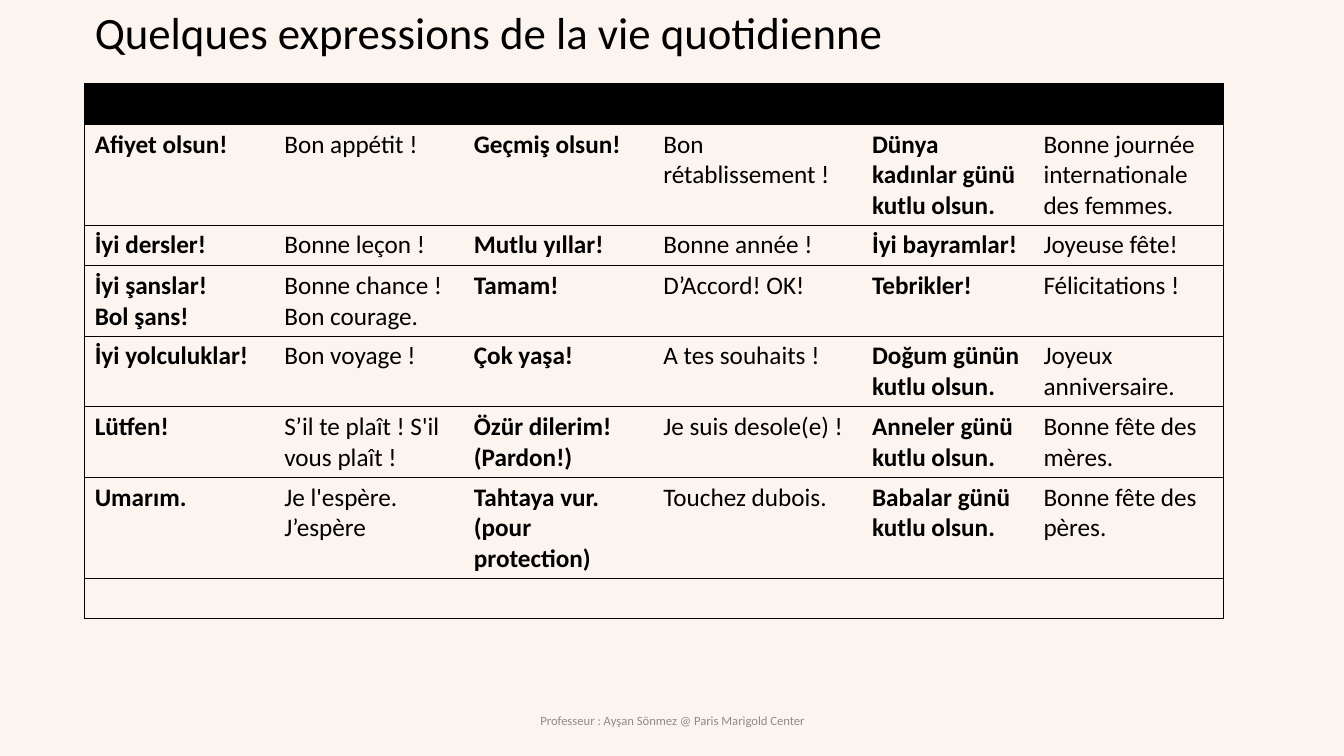
"""Build a slide with a table of everyday Turkish expressions and their French meaning."""
import pptx
import pptx.dml.color
import pptx.enum.text
import pptx.oxml
import pptx.oxml.ns
import pptx.util

TITLE = "Quelques expressions de la vie quotidienne"
FOOTER = "Professeur : Ayşan Sönmez @ Paris Marigold Center"
EXPRESSIONS = [
    ("Afiyet olsun!", "Bon appétit !", "Geçmiş olsun!", "Bon rétablissement !",
     "Dünya kadınlar günü kutlu olsun.", "Bonne journée internationale des femmes."),
    ("İyi dersler!", "Bonne leçon !", "Mutlu yıllar!", "Bonne année !",
     "İyi bayramlar!", "Joyeuse fête!"),
    ("İyi şanslar!\nBol şans!", "Bonne chance ! Bon courage.", "Tamam!", "D’Accord! OK!",
     "Tebrikler!", "Félicitations !"),
    ("İyi yolculuklar!", "Bon voyage !", "Çok yaşa!", "A tes souhaits !",
     "Doğum günün kutlu olsun.", "Joyeux anniversaire."),
    ("Lütfen!", "S’il te plaît ! S'il vous plaît !", "Özür dilerim!\n(Pardon!)",
     "Je suis desole(e) !", "Anneler günü kutlu olsun.", "Bonne fête des mères."),
    ("Umarım.", "Je l'espère.\nJ’espère", "Tahtaya vur.\n(pour protection)",
     "Touchez dubois.", "Babalar günü kutlu olsun.", "Bonne fête des pères."),
]
BLANK = ("",) * 6
ROWS = [BLANK, *EXPRESSIONS, BLANK]
COLUMN_WIDTHS = (1.88, 1.88, 1.88, 2.07, 1.7, 1.88)
ROW_HEIGHT = 0.37
SLIDE_SIZE = (13.33, 7.5)
LEFT = 0.84
TITLE_BOX = (LEFT, 0, 10.01, 0.64)
TABLE_BOX = (LEFT, 0.83, sum(COLUMN_WIDTHS), ROW_HEIGHT * len(ROWS))
FOOTER_BOX = (4.42, 6.95, 4.5, 0.4)

THEME = {
    "font": "Calibri",
    "background": "FBF4EF", "ink": "000000", "muted": "8C8C8C",
    "title": 32, "body": 18, "footer": 9,
    "border": 0.5,
}


def inches(values):
    return [pptx.util.Inches(value) for value in values]


def set_all(target, values):
    for name, value in values.items():
        setattr(target, name, value)


def paint(fill, colour):
    fill.solid()
    fill.fore_color.rgb = pptx.dml.color.RGBColor.from_string(THEME[colour])


def write(text_frame, text, size, colour="ink", bold=False, alignment=None):
    text_frame.text = text
    for paragraph in text_frame.paragraphs:
        paragraph.alignment = alignment
        for run in paragraph.runs:
            set_all(run.font, {"name": THEME["font"], "bold": bold,
                               "size": pptx.util.Pt(THEME[size])})
            run.font.color.rgb = pptx.dml.color.RGBColor.from_string(THEME[colour])


def set_borders(cell, visible_sides):
    properties = cell._tc.get_or_add_tcPr()
    width = pptx.util.Pt(THEME["border"])
    for index, side in enumerate("LRTB"):
        fill = "<a:noFill/>"
        if side in visible_sides:
            fill = f'<a:solidFill><a:srgbClr val="{THEME["ink"]}"/></a:solidFill>'
        properties.insert(index, pptx.oxml.parse_xml(
            f'<a:ln{side} {pptx.oxml.ns.nsdecls("a")} w="{width}">{fill}</a:ln{side}>'))


def add_title(slide):
    title = slide.shapes.title
    set_all(title, dict(zip(("left", "top", "width", "height"), inches(TITLE_BOX))))
    set_all(title.text_frame, {"word_wrap": True,
                               "auto_size": pptx.enum.text.MSO_AUTO_SIZE.NONE,
                               "vertical_anchor": pptx.enum.text.MSO_ANCHOR.TOP})
    write(title.text_frame, TITLE, "title", alignment=pptx.enum.text.PP_ALIGN.LEFT)


def add_expressions(slide):
    table = slide.shapes.add_table(len(ROWS), len(COLUMN_WIDTHS), *inches(TABLE_BOX)).table
    set_all(table, {"first_row": False, "horz_banding": False})
    for column, width in zip(table.columns, COLUMN_WIDTHS):
        column.width = pptx.util.Inches(width)
    last_column = len(COLUMN_WIDTHS) - 1
    for row_index, (row, texts) in enumerate(zip(table.rows, ROWS)):
        row.height = pptx.util.Inches(ROW_HEIGHT)
        for column_index, (cell, text) in enumerate(zip(row.cells, texts)):
            if row_index == 0:
                paint(cell.fill, "ink")
            else:
                cell.fill.background()
            if text:
                write(cell.text_frame, text, "body", bold=column_index % 2 == 0)
            sides = {0: "LTB", last_column: "RTB"}.get(column_index, "TB")
            set_borders(cell, sides)


def add_footer(slide):
    text_frame = slide.shapes.add_textbox(*inches(FOOTER_BOX)).text_frame
    set_all(text_frame, {"word_wrap": True,
                         "vertical_anchor": pptx.enum.text.MSO_ANCHOR.MIDDLE})
    write(text_frame, FOOTER, "footer", "muted", alignment=pptx.enum.text.PP_ALIGN.CENTER)


def main():
    presentation = pptx.Presentation()
    set_all(presentation, dict(zip(("slide_width", "slide_height"), inches(SLIDE_SIZE))))
    slide = presentation.slides.add_slide(presentation.slide_layouts[5])
    paint(slide.background.fill, "background")
    add_footer(slide)
    add_expressions(slide)
    add_title(slide)
    presentation.save("out.pptx")


if __name__ == "__main__":
    main()
